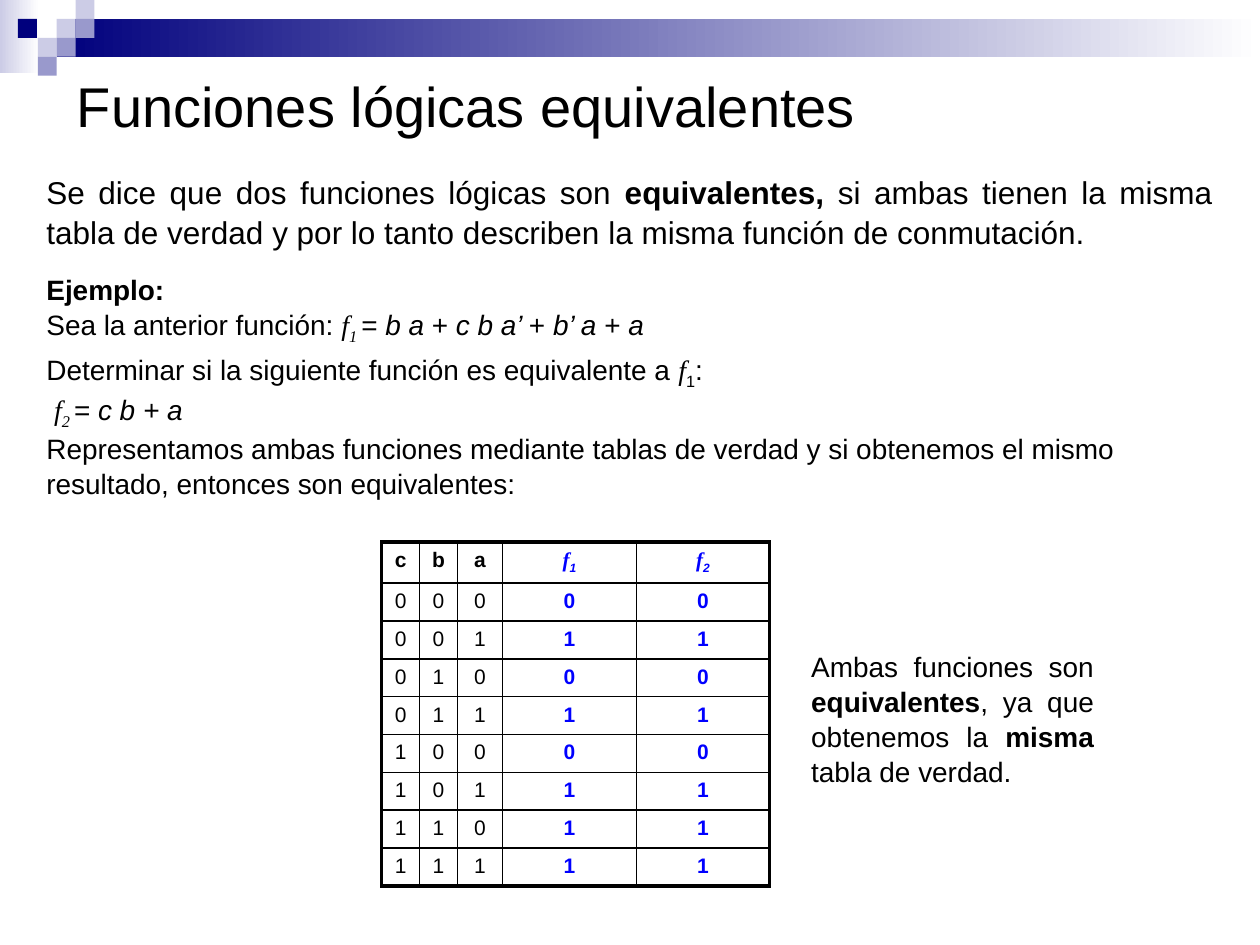
import itertools
from dataclasses import dataclass

import pptx
import pptx.dml.color
import pptx.enum.shapes
import pptx.enum.text
import pptx.oxml.ns
import pptx.util
from lxml import etree

Inches = pptx.util.Inches
Pt = pptx.util.Pt
ALIGN = pptx.enum.text.PP_ALIGN
ANCHOR = pptx.enum.text.MSO_ANCHOR


@dataclass(frozen=True)
class Theme:
    ink: str = "000000"
    result: str = "0000FF"
    navy: str = "00007D"
    violet: str = "9999CC"
    lilac: str = "CCCCE6"
    white: str = "FFFFFF"
    sans: str = "Arial"
    serif: str = "Times New Roman"
    title: float = 32
    lead: float = 18
    body: float = 16
    cell: float = 12
    leading: float = 1.05
    outer: float = 2.25
    inner: float = 1


T = Theme()
UNIT = 0.15
LEFT, WIDTH = 0.27, 9.45
COLUMNS = (0.3, 0.3, 0.36, 1.06, 1.06)
ROW = 0.3


def rgb(value):
    return pptx.dml.color.RGBColor.from_string(value)


def add_run(p, text, style="", size=T.body, color=T.ink):
    """Style letters: b bold, i italic, t serif, s subscript."""
    r = p.add_run()
    r.text = text
    r.font.size = Pt(size)
    r.font.name = T.serif if "t" in style else T.sans
    r.font.color.rgb = rgb(color)
    r.font.bold = "b" in style
    r.font.italic = "i" in style
    if "s" in style:
        r._r.get_or_add_rPr().set("baseline", "-25000")


def add_text(s, box, paragraphs, size=T.body, align=ALIGN.LEFT):
    tf = s.shapes.add_textbox(*map(Inches, box)).text_frame
    tf.word_wrap = True
    for i, runs in enumerate(paragraphs):
        p = tf.add_paragraph() if i else tf.paragraphs[0]
        p.alignment = align
        p.line_spacing = T.leading
        for text, style in runs:
            add_run(p, text, style, size)


def add_block(s, col, row, cols, rows, color, fade=False):
    box = (Inches(n * UNIT) for n in (col, row, cols, rows))
    sp = s.shapes.add_shape(pptx.enum.shapes.MSO_SHAPE.RECTANGLE, *box)
    sp.shadow.inherit = False
    sp.line.fill.background()
    if fade:
        sp.fill.gradient()
        sp.fill.gradient_angle = 0
        for stop, shade, position in zip(sp.fill.gradient_stops, (color, T.white), (0, 1)):
            stop.color.rgb = rgb(shade)
            stop.position = position
    else:
        sp.fill.solid()
        sp.fill.fore_color.rgb = rgb(color)


def add_banner(s):
    add_block(s, 0, 0, 2.07, 3.87, T.lilac, fade=True)
    add_block(s, 3, 1, 63.67, 2, T.navy, fade=True)
    squares = {
        T.lilac: ((3, 1), (4, 0), (2, 2)),
        T.violet: ((4, 1), (3, 2), (2, 3)),
        T.navy: ((0.95, 1),),
    }
    for color, places in squares.items():
        for col, row in places:
            add_block(s, col, row, 1, 1, color)


def add_title(s, text):
    sp = s.shapes.title
    sp.left, sp.top, sp.width, sp.height = map(Inches, (0.51, 0.52, 9, 0.63))
    tf = sp.text_frame
    tf.vertical_anchor = ANCHOR.MIDDLE
    p = tf.paragraphs[0]
    p.alignment = ALIGN.LEFT
    add_run(p, text, size=T.title)


def set_borders(cell, widths):
    tcPr = cell._tc.get_or_add_tcPr()
    for side, width in zip("LRTB", widths):
        ln = etree.SubElement(tcPr, pptx.oxml.ns.qn(f"a:ln{side}"), w=str(Pt(width)))
        fill = etree.SubElement(ln, pptx.oxml.ns.qn("a:solidFill"))
        etree.SubElement(fill, pptx.oxml.ns.qn("a:srgbClr"), val=T.ink)


def truth_rows():
    yield [[(name, "b")] for name in "cba"] + [[("f", "bit"), (n, "bis")] for n in "12"]
    for c, b, a in itertools.product((0, 1), repeat=3):
        f1 = b & a | c & b & a ^ c & b | (1 - b) & a | a
        f2 = c & b | a
        yield [[(str(v), "")] for v in (c, b, a)] + [[(str(v), "b")] for v in (f1, f2)]


def add_truth_table(s):
    rows = list(truth_rows())
    last_row, last_col = len(rows) - 1, len(COLUMNS) - 1
    box = map(Inches, (3.03, 4.3, sum(COLUMNS), ROW * len(rows)))
    table = s.shapes.add_table(len(rows), len(COLUMNS), *box).table
    table.first_row = table.horz_banding = False
    for column, width in zip(table.columns, COLUMNS):
        column.width = Inches(width)
    for i, row in enumerate(rows):
        table.rows[i].height = Inches(ROW)
        for j, runs in enumerate(row):
            cell = table.cell(i, j)
            edges = (j == 0, j == last_col, i == 0, i == last_row)
            set_borders(cell, [T.outer if edge else T.inner for edge in edges])
            cell.fill.background()
            p = cell.text_frame.paragraphs[0]
            p.alignment = ALIGN.CENTER
            for text, style in runs:
                add_run(p, text, style, T.cell, T.result if j > 2 else T.ink)


def main():
    prs = pptx.Presentation()
    prs.slide_width, prs.slide_height = Inches(10), Inches(7.5)
    s = prs.slides.add_slide(prs.slide_layouts[5])
    add_banner(s)
    add_title(s, "Funciones lógicas equivalentes")
    add_text(s, (LEFT, 1.31, WIDTH, 0.71), [[
        ("Se dice que dos funciones lógicas son ", ""),
        ("equivalentes, ", "b"),
        ("si ambas tienen la misma tabla de verdad y por lo tanto "
         "describen la misma función de conmutación.", ""),
    ]], T.lead, ALIGN.JUSTIFY)
    add_truth_table(s)
    add_text(s, (LEFT, 2.1, WIDTH, 0.62), [
        [("Ejemplo:", "b")],
        [("Sea la anterior función: ", ""), ("f", "it"), ("1 ", "its"), ("= ", ""),
         ("b a ", "i"), ("+ ", ""), ("c b a’ ", "i"), ("+ ", ""),
         ("b’ a ", "i"), ("+ ", ""), ("a", "i")],
    ])
    add_text(s, (LEFT, 2.73, WIDTH, 0.62), [
        [("Determinar si la siguiente función es equivalente a ", ""),
         ("f", "it"), ("1", "s"), (":", "")],
        [(" ", ""), ("f", "it"), ("2 ", "its"), ("= ", ""), ("c b + a", "i")],
    ])
    add_text(s, (LEFT, 3.36, WIDTH, 0.55), [[
        ("Representamos ambas funciones mediante tablas de verdad y si obtenemos "
         "el mismo resultado, entonces son equivalentes:", ""),
    ]])
    add_text(s, (6.34, 5.09, 2.44, 1.18), [[
        ("Ambas funciones son ", ""), ("equivalentes", "b"),
        (", ya que obtenemos la ", ""), ("misma", "b"), (" tabla de verdad.", ""),
    ]], align=ALIGN.JUSTIFY)
    prs.save("out.pptx")


if __name__ == "__main__":
    main()
